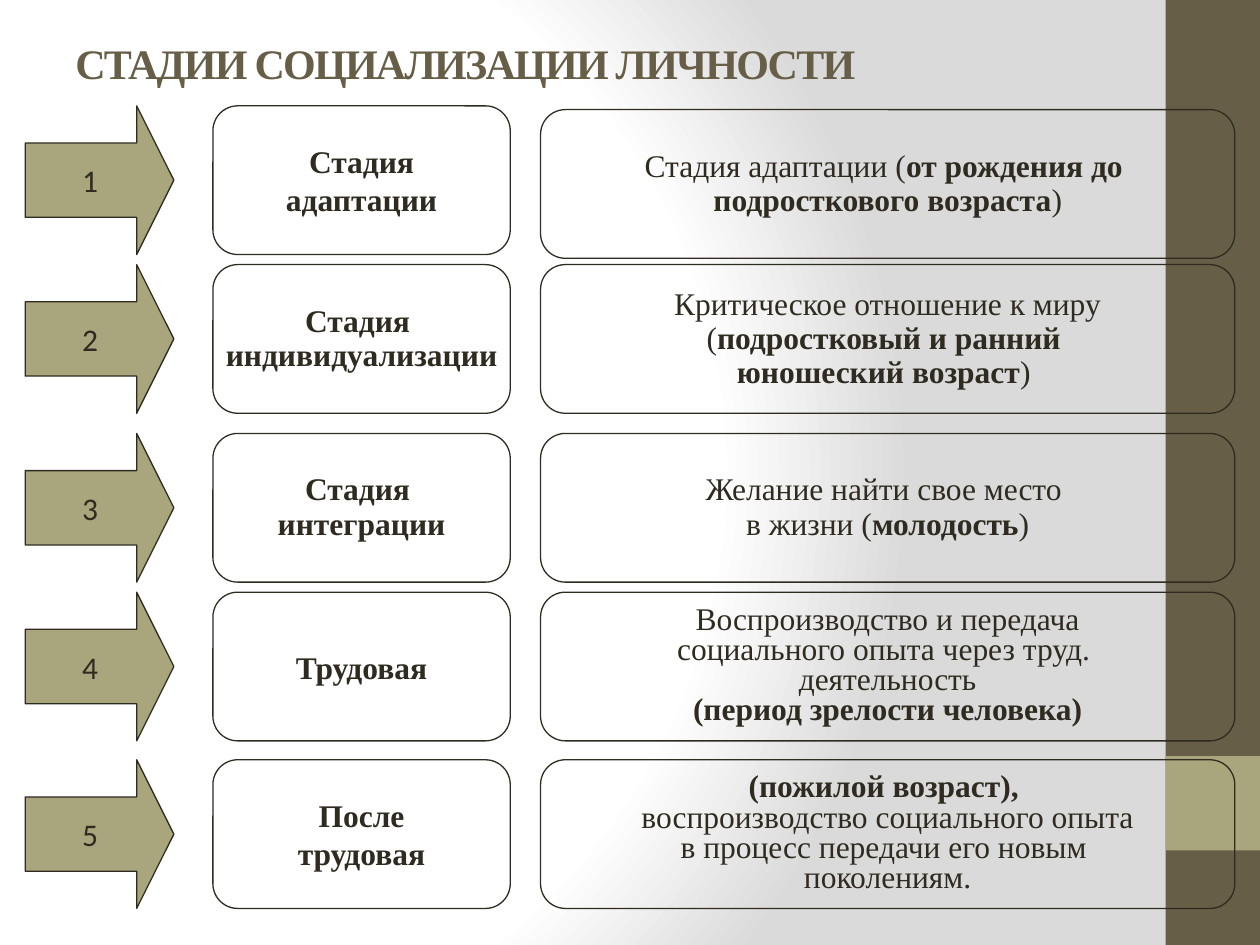
from pptx import Presentation
from pptx.dml.color import RGBColor as RGB
from pptx.enum.shapes import MSO_SHAPE as Kind
from pptx.enum.text import MSO_ANCHOR as Anchor, PP_ALIGN as Align
from pptx.oxml import parse_xml
from pptx.oxml.ns import nsdecls, qn
from pptx.util import Inches, Pt

BROWN = RGB(0x67, 0x5E, 0x47)
OLIVE = RGB(0xA9, 0xA5, 0x7C)
INK = RGB(0x2F, 0x2B, 0x20)
SERIF, SANS = "Times New Roman", "Calibri"

TITLE = "СТАДИИ СОЦИАЛИЗАЦИИ ЛИЧНОСТИ"
# Asterisks switch bold on and off.
STAGES = [
    (0.84, 1, ["*Стадия", "*адаптации"],
     0.9, ["Стадия адаптации (*от рождения до ", "*подросткового возраста*)"]),
    (2.1, 0.9, ["*Стадия ", "*индивидуализации"],
     0.9, ["Критическое отношение к миру", "(*подростковый и ранний ",
           "*юношеский возраст*) "]),
    (3.44, 0.9, ["*Стадия ", "*интеграции"],
     0.9, ["Желание найти свое место ", "в жизни (*молодость*)"]),
    (4.7, 1, ["*Трудовая"],
     0.8, ["Воспроизводство и передача", "социального опыта через труд. ",
           "деятельность", "*(период зрелости человека)"]),
    (6.03, 1, ["*После", "*трудовая"],
     0.8, ["*(пожилой возраст), ", " воспроизводство социального опыта ",
           "в процесс передачи его новым ", "поколениям."]),
]
WIDE, HIGH = 10, 7.5
SIDE = WIDE * 0.075
ROW = 1.18
COLS = [(0.2, ROW), (1.69, 2.36), (4.29, 5.51)]
GRAD = f"""<a:gradFill {nsdecls('a')} rotWithShape="1"><a:gsLst>
<a:gs pos="0"><a:srgbClr val="FFFFFF"/></a:gs>
<a:gs pos="75000"><a:srgbClr val="FFFFFF"/></a:gs>
<a:gs pos="100000"><a:srgbClr val="DADADA"/></a:gs></a:gsLst>
<a:path path="circle"><a:fillToRect l="20000" t="50000" r="100000" b="50000"/></a:path>
</a:gradFill>"""

deck = Presentation()
deck.slide_width, deck.slide_height = Inches(WIDE), Inches(HIGH)
slide = deck.slides.add_slide(deck.slide_layouts[6])


def paint():
    slide.background.fill.solid()
    back = slide.element.find(".//" + qn("p:bgPr"))
    back.replace(back[0], parse_xml(GRAD))


def shape(kind, x, y, w, h, fill=None, line=None):
    item = slide.shapes.add_shape(kind, *map(Inches, (x, y, w, h)))
    item.shadow.inherit = False
    if fill is None:
        item.fill.background()
    else:
        item.fill.solid()
        item.fill.fore_color.rgb = fill
    if line is None:
        item.line.fill.background()
    else:
        item.line.color.rgb = line
        item.line.width = Pt(0.75)
    return item


def style(run, face, size, color, bold):
    font = run.font
    font.name, font.size, font.bold = face, Pt(size), bold
    font.color.rgb = color


def write(item, rows, face=SERIF, gap=1):
    frame = item.text_frame
    frame.word_wrap = False
    frame.vertical_anchor = Anchor.MIDDLE
    for i, row in enumerate(rows):
        para = frame.paragraphs[0] if i == 0 else frame.add_paragraph()
        para.alignment = Align.CENTER
        para.line_spacing = gap
        for j, part in enumerate(row.split("*")):
            if part:
                run = para.add_run()
                run.text = part
                style(run, face, 18, INK, j % 2 == 1)


def head():
    box = slide.shapes.add_textbox(*map(Inches, (0.5, 0.3, 9, 0.39)))
    frame = box.text_frame
    frame.word_wrap = True
    frame.vertical_anchor = Anchor.MIDDLE
    frame.text = TITLE
    run = frame.paragraphs[0].runs[0]
    style(run, SERIF, 24, BROWN, True)
    run.font._element.set("spc", "-100")


def stage(num, top, gap, name, pitch, note):
    (ax, aw), (bx, bw), (cx, cw) = COLS
    arrow = shape(Kind.RIGHT_ARROW, ax, top, aw, ROW, OLIVE, INK)
    arrow.adjustments[0], arrow.adjustments[1] = 0.5, 0.25
    write(arrow, [str(num)], SANS)
    drop = 0.03 if num == 1 else 0
    for x, y, w, rows, space in ((bx, top, bw, name, gap),
                                 (cx, top + drop, cw, note, pitch)):
        write(shape(Kind.ROUNDED_RECTANGLE, x, y, w, ROW, line=INK),
              rows, gap=space)


paint()
shape(Kind.RECTANGLE, WIDE - SIDE, 0, SIDE, HIGH, BROWN)
shape(Kind.RECTANGLE, WIDE - SIDE, HIGH * 0.8, SIDE, SIDE, OLIVE)
head()
for num, data in enumerate(STAGES, 1):
    stage(num, *data)
deck.save("out.pptx")
